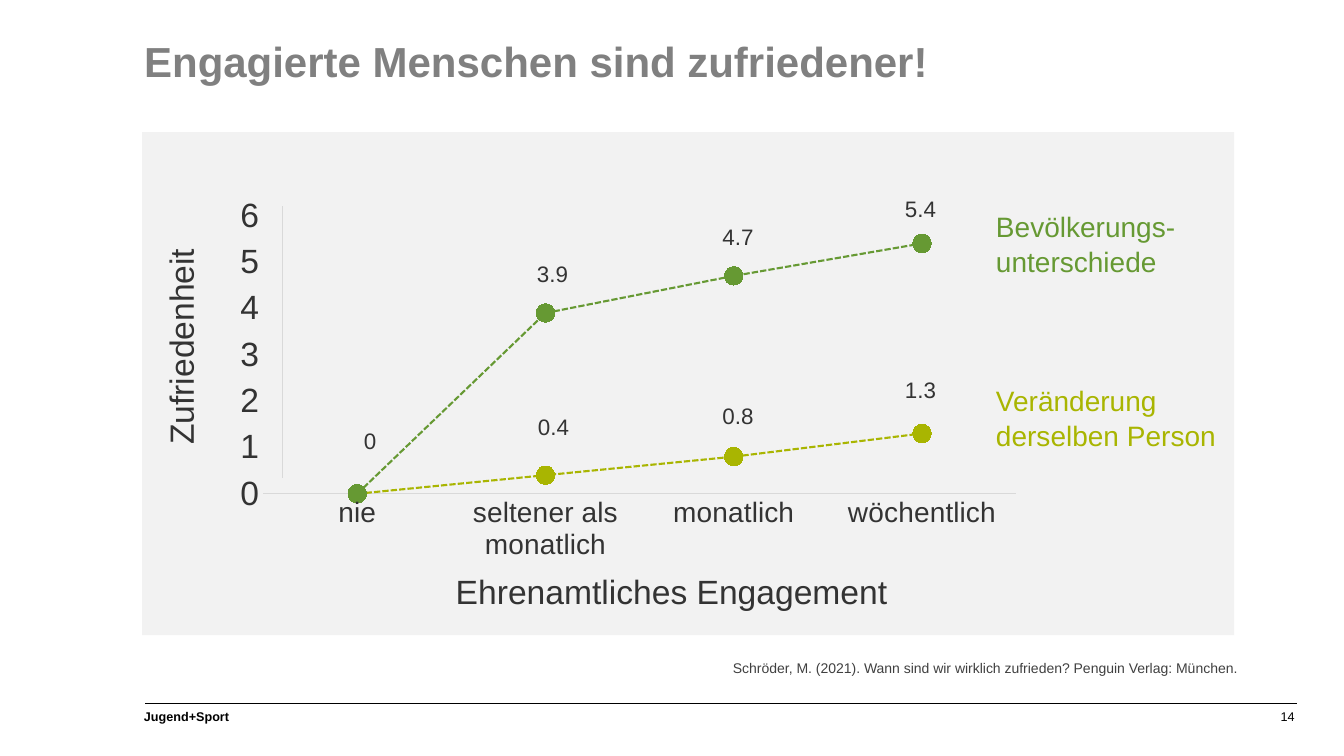
import pptx
import pptx.chart.data
import pptx.dml.color
import pptx.enum.chart
import pptx.enum.dml
import pptx.enum.shapes
import pptx.enum.text
import pptx.util
from lxml import etree
from pptx.util import Inches

COLORS = {
    "black": "000000", "title": "808080", "panel": "F2F2F2", "source": "404040",
    "label": "333333", "axis": "D9D9D9", "lime": "A9B501", "green": "669933",
}
FONT = "Arial"

TITLE = "Engagierte Menschen sind zufriedener!"
SOURCE = "Schröder, M. (2021). Wann sind wir wirklich zufrieden? Penguin Verlag: München."
FOOTER = "Jugend+Sport"
PAGE_NUMBER = "14"
X_TITLE = "Ehrenamtliches Engagement"
Y_TITLE = "Zufriedenheit"
FREQUENCIES = ["nie", "seltener als monatlich", "monatlich", "wöchentlich"]
GROUPS = [
    {"name": "Veränderung derselben Person", "values": [0, 0.4, 0.8, 1.3],
     "color": "lime", "top": 3.74},
    {"name": "Bevölkerungs-unterschiede", "values": [0, 3.9, 4.7, 5.4],
     "color": "green", "top": 2.01},
]
VALUE_LABELS = [
    ("0", 3.4, 4.18), ("3.9", 5.21, 2.52), ("4.7", 7.05, 2.15), ("5.4", 8.86, 1.87),
    ("0.4", 5.22, 4.04), ("0.8", 7.05, 3.93), ("1.3", 8.86, 3.67),
]

CHART_BOX = (2.23, 1.88, 8.01, 3.76)
PLOT_BOX = (2.61, 2.14, 7.47, 2.76)

ALIGN = pptx.enum.text.PP_ALIGN
XL = pptx.enum.chart


def rgb(name):
    return pptx.dml.color.RGBColor.from_string(COLORS[name])


def style_font(font, size, color, bold=False):
    font.name = FONT
    font.size = pptx.util.Pt(size)
    font.bold = bold
    font.color.rgb = rgb(color)


def add_text(text, box, size, color, bold=False, align=ALIGN.LEFT, wrap=True,
             margins=(0.1, 0.05, 0.1, 0.05), rotation=0):
    textbox = slide.shapes.add_textbox(*map(Inches, box))
    textbox.rotation = rotation
    frame = textbox.text_frame
    frame.word_wrap = wrap
    frame.margin_left, frame.margin_top, frame.margin_right, frame.margin_bottom = map(Inches, margins)
    paragraph = frame.paragraphs[0]
    paragraph.alignment = align
    paragraph.line_spacing = 1.05
    run = paragraph.add_run()
    run.text = text
    style_font(run.font, size, color, bold)


def add_rule(start, end, color):
    rule = slide.shapes.add_connector(
        pptx.enum.shapes.MSO_CONNECTOR.STRAIGHT, *map(Inches, start + end))
    rule.line.color.rgb = rgb(color)
    rule.line.width = pptx.util.Pt(0.75)
    etree.SubElement(rule._element.spPr, pptx.oxml.ns.qn("a:effectLst"))


def set_plot_layout(chart):
    left, top, width, height = CHART_BOX
    x, y, w, h = PLOT_BOX
    plot_area = chart._chartSpace.chart.plotArea
    for old in plot_area.findall(pptx.oxml.ns.qn("c:layout")):
        plot_area.remove(old)
    layout = etree.Element(pptx.oxml.ns.qn("c:layout"))
    manual = etree.SubElement(layout, pptx.oxml.ns.qn("c:manualLayout"))
    settings = [
        ("layoutTarget", "inner"), ("xMode", "edge"), ("yMode", "edge"),
        ("x", (x - left) / width), ("y", (y - top) / height),
        ("w", w / width), ("h", h / height),
    ]
    for tag, value in settings:
        etree.SubElement(manual, pptx.oxml.ns.qn("c:" + tag)).set("val", str(value))
    plot_area.insert(0, layout)


def add_satisfaction_chart():
    data = pptx.chart.data.CategoryChartData()
    data.categories = FREQUENCIES
    for group in GROUPS:
        data.add_series(group["name"], group["values"])
    chart = slide.shapes.add_chart(
        XL.XL_CHART_TYPE.LINE_MARKERS, *map(Inches, CHART_BOX), data).chart
    chart.has_legend = False
    chart.has_title = False
    style_font(chart.font, 10, "black")
    chart.plots[0].vary_by_categories = False
    for axis, size in ((chart.category_axis, 20), (chart.value_axis, 24)):
        axis.has_major_gridlines = False
        axis.major_tick_mark = axis.minor_tick_mark = XL.XL_TICK_MARK.NONE
        style_font(axis.tick_labels.font, size, "label")
    chart.category_axis.format.line.color.rgb = rgb("axis")
    chart.category_axis.format.line.width = pptx.util.Pt(0.75)
    chart.value_axis.format.line.fill.background()
    chart.value_axis.minimum_scale = 0
    chart.value_axis.maximum_scale = 6
    chart.value_axis.major_unit = 1
    for series, group in zip(chart.plots[0].series, GROUPS):
        color = rgb(group["color"])
        series.smooth = False
        series.format.line.color.rgb = color
        series.format.line.width = pptx.util.Pt(1.5)
        series.format.line.dash_style = pptx.enum.dml.MSO_LINE.SQUARE_DOT
        series.marker.style = XL.XL_MARKER_STYLE.CIRCLE
        series.marker.size = 13
        series.marker.format.fill.solid()
        series.marker.format.fill.fore_color.rgb = color
        series.marker.format.line.color.rgb = color
    set_plot_layout(chart)


presentation = pptx.Presentation()
presentation.slide_width = Inches(13.33)
presentation.slide_height = Inches(7.5)
slide = presentation.slides.add_slide(presentation.slide_layouts[6])

add_text(PAGE_NUMBER, (9.62, 7.03, 3.22, 0.16), 9, "black", align=ALIGN.RIGHT, margins=(0, 0, 0, 0))
add_rule((12.86, 6.98), (1.44, 6.98), "black")
add_text(FOOTER, (1.33, 6.98, 5.7, 0.25), 9, "black", bold=True)

panel = slide.shapes.add_shape(
    pptx.enum.shapes.MSO_SHAPE.RECTANGLE, *map(Inches, (1.41, 1.31, 10.83, 4.99)))
panel.shadow.inherit = False
panel.fill.solid()
panel.fill.fore_color.rgb = rgb("panel")
panel.line.fill.background()

add_text(TITLE, (1.43, 0.28, 11.42, 1.14), 30, "title", bold=True, margins=(0, 0.05, 0, 0.05))
add_text(SOURCE, (7.14, 6.49, 5.13, 0.27), 10, "source", align=ALIGN.RIGHT, wrap=False,
         margins=(0.1, 0.05, 0, 0.05))
add_satisfaction_chart()
for group in GROUPS:
    add_text(group["name"], (9.78, group["top"], 2.79, 0.77), 20, group["color"])
add_text(X_TITLE, (4.2, 5.59, 4.92, 0.5), 24, "label", align=ALIGN.CENTER)
add_text(Y_TITLE, (-0.11, 3.19, 3.76, 0.5), 24, "label", align=ALIGN.CENTER, rotation=270)
for value, left, top in VALUE_LABELS:
    add_text(value, (left, top, 0.54, 0.37), 16, "label", align=ALIGN.CENTER)
add_rule((2.8, 4.74), (2.8, 2.04), "axis")

presentation.save("out.pptx")
